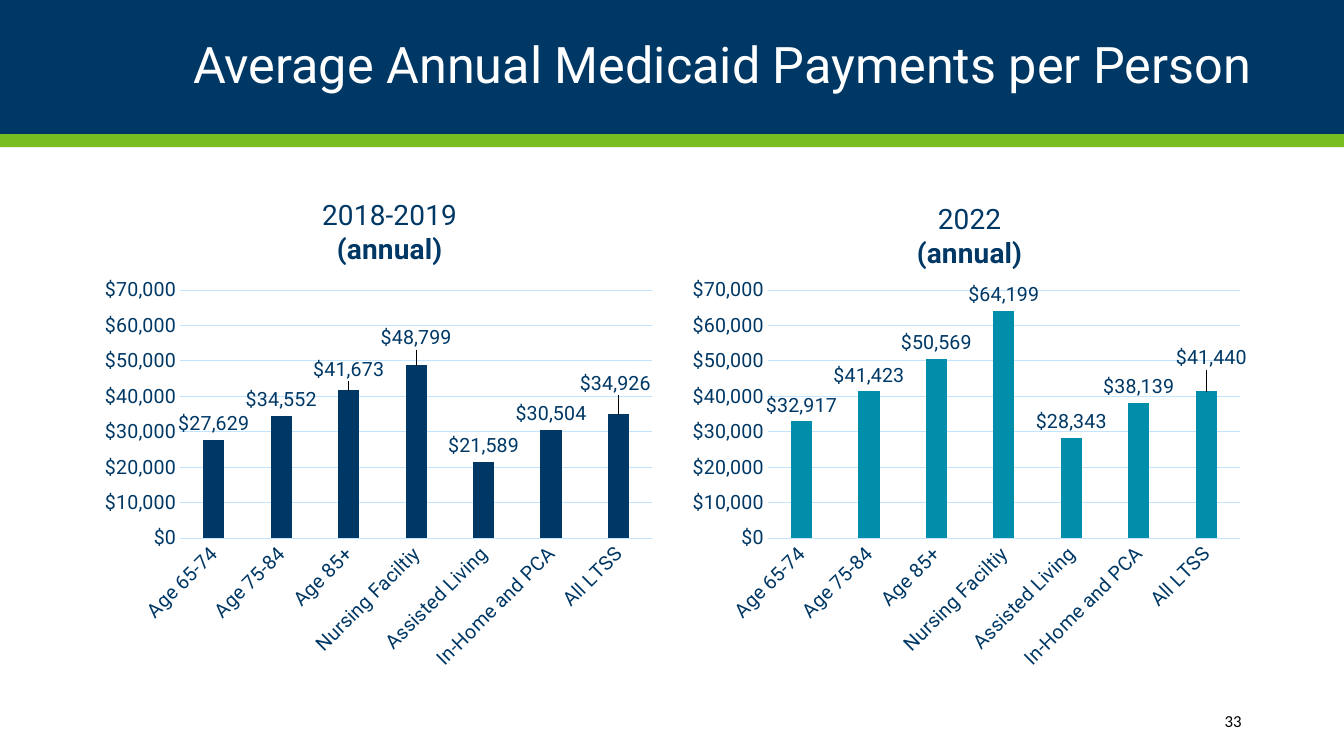
from dataclasses import dataclass

from lxml import etree
from pptx import Presentation
from pptx.chart.data import CategoryChartData
from pptx.dml.color import RGBColor
from pptx.enum.chart import XL_CHART_TYPE, XL_LABEL_POSITION, XL_TICK_MARK
from pptx.enum.shapes import MSO_SHAPE
from pptx.enum.text import MSO_ANCHOR, MSO_AUTO_SIZE, PP_ALIGN
from pptx.oxml.ns import qn
from pptx.util import Cm, Pt

COLUMNS = XL_CHART_TYPE.COLUMN_CLUSTERED
OUTSIDE_END = XL_LABEL_POSITION.OUTSIDE_END
NO_TICK = XL_TICK_MARK.NONE
RECTANGLE = MSO_SHAPE.RECTANGLE
MIDDLE = MSO_ANCHOR.MIDDLE
NO_AUTOFIT = MSO_AUTO_SIZE.NONE
RIGHT = PP_ALIGN.RIGHT


@dataclass(frozen=True)
class Theme:
    navy: RGBColor = RGBColor(0x00, 0x38, 0x65)
    green: RGBColor = RGBColor(0x78, 0xBE, 0x21)
    teal: RGBColor = RGBColor(0x00, 0x8E, 0xAA)
    grid: RGBColor = RGBColor(0xC2, 0xE4, 0xFF)
    white: RGBColor = RGBColor(0xFF, 0xFF, 0xFF)
    black: RGBColor = RGBColor(0x00, 0x00, 0x00)
    font: str = "Roboto"
    number_font: str = "Calibri"
    title_size: Pt = Pt(36)
    chart_title_size: Pt = Pt(20)
    label_size: Pt = Pt(14)
    number_size: Pt = Pt(12)
    hairline: Pt = Pt(0.75)


THEME = Theme()
SLIDE_WIDTH, SLIDE_HEIGHT = Cm(33.87), Cm(19.05)
BANNER_HEIGHT = Cm(3.38)
MARGIN = Cm(2.34)
CHART_TOP, CHART_WIDTH, CHART_HEIGHT = Cm(4.42), Cm(14.4), Cm(12.73)
DOLLARS = '"$"#,##0'
GROUPS = ["Age 65-74", "Age 75-84", "Age 85+", "Nursing Faciltiy",
          "Assisted Living", "In-Home and PCA", "All LTSS"]


def style_font(font, size, color, name=THEME.font):
    font.size = size
    font.name = name
    font.color.rgb = color


def add_band(slide, top, height, color):
    band = slide.shapes.add_shape(RECTANGLE, 0, top, SLIDE_WIDTH, height)
    band.shadow.inherit = False
    band.fill.solid()
    band.fill.fore_color.rgb = color
    band.line.fill.background()
    return band


def set_title(slide, text):
    title = slide.shapes.title
    title.left, title.top = MARGIN, 0
    title.width, title.height = Cm(29.21), BANNER_HEIGHT
    frame = title.text_frame
    frame.text = text
    frame.auto_size = NO_AUTOFIT
    frame.vertical_anchor = MIDDLE
    frame.margin_left = frame.margin_right = 0
    heading = frame.paragraphs[0]
    heading.alignment = RIGHT
    heading.line_spacing = 0.9
    style_font(heading.font, THEME.title_size, THEME.white)


def place_in_chart(parent, index, x, y, size=None, edge=True):
    """Give a chart part a manual layout, from lengths within the chart."""
    for old in parent.findall(qn("c:layout")):
        parent.remove(old)
    layout = etree.Element(qn("c:layout"))
    manual = etree.SubElement(layout, qn("c:manualLayout"))
    settings = []
    if size:
        settings.append(("layoutTarget", "inner"))
    if edge:
        settings += [("xMode", "edge"), ("yMode", "edge")]
    settings += [("x", x / CHART_WIDTH), ("y", y / CHART_HEIGHT)]
    if size:
        settings += [("w", size[0] / CHART_WIDTH), ("h", size[1] / CHART_HEIGHT)]
    for tag, value in settings:
        etree.SubElement(manual, qn(f"c:{tag}")).set("val", str(value))
    parent.insert(index, layout)


def set_chart_title(chart, period, x, y):
    frame = chart.chart_title.text_frame
    frame.text = period
    annual = frame.add_paragraph()
    annual.text = "(annual)"
    for paragraph in frame.paragraphs:
        style_font(paragraph.font, THEME.chart_title_size, THEME.navy)
        paragraph.font.bold = paragraph.text == annual.text
    place_in_chart(chart.element.xpath("c:chart/c:title")[0], 1, x, y)


def style_axes(chart):
    groups, payments = chart.category_axis, chart.value_axis
    for axis in (groups, payments):
        axis.major_tick_mark = axis.minor_tick_mark = NO_TICK
        style_font(axis.tick_labels.font, THEME.label_size, THEME.navy)
    payments.minimum_scale, payments.maximum_scale = 0, 70000
    payments.major_unit = 10000
    payments.tick_labels.number_format = DOLLARS
    payments.tick_labels.number_format_is_linked = False
    payments.format.line.fill.background()
    payments.has_major_gridlines = True
    for line in (groups.format.line, payments.major_gridlines.format.line):
        line.color.rgb = THEME.grid
        line.width = THEME.hairline
    slant = chart.element.xpath(".//c:catAx/c:txPr/a:bodyPr")[0]
    slant.set("rot", "-2700000")
    slant.set("vert", "horz")


def label_bars(plot, label_shifts):
    plot.has_data_labels = True
    labels = plot.data_labels
    labels.show_value = True
    labels.position = OUTSIDE_END
    labels.number_format = DOLLARS
    labels.number_format_is_linked = False
    style_font(labels.font, THEME.label_size, THEME.navy)
    bars = plot.series[0]
    for index, (x, y) in label_shifts.items():
        label = bars.points[index].data_label
        label.position = OUTSIDE_END
        style_font(label.font, THEME.label_size, THEME.navy)
        place = bars.data_labels
        place.show_value = True
        place.position = OUTSIDE_END
        place.number_format = DOLLARS
        place.number_format_is_linked = False
        style_font(place.font, THEME.label_size, THEME.navy)
    for element in plot.series[0].points and bars.format and label_elements(plot):
        index = int(element.find(qn("c:idx")).get("val"))
        place_in_chart(element, 1, *label_shifts[index], edge=False)


def label_elements(plot):
    return plot.series[0].data_labels._element.findall(qn("c:dLbl"))


def add_payment_chart(slide, left, period, payments, color, title_at, label_shifts):
    data = CategoryChartData(number_format=DOLLARS)
    data.categories = GROUPS
    data.add_series("Series 1", payments)
    chart = slide.shapes.add_chart(
        COLUMNS, left, CHART_TOP, CHART_WIDTH, CHART_HEIGHT, data).chart
    style_font(chart.font, THEME.label_size, THEME.navy)
    chart.has_legend = False
    set_chart_title(chart, period, *title_at)
    style_axes(chart)
    plot = chart.plots[0]
    plot.vary_by_categories = False
    plot.gap_width, plot.overlap = 219, -27
    fill = plot.series[0].format.fill
    fill.solid()
    fill.fore_color.rgb = color
    label_bars(plot, label_shifts)
    place_in_chart(chart.element.xpath("c:chart/c:plotArea")[0], 0,
                   Cm(2.2), Cm(2.89), size=(Cm(11.9), Cm(6.25)))


def add_slide_number(slide, number):
    frame = slide.shapes.add_textbox(Cm(27.48), Cm(17.65), Cm(4.06), Cm(1.02)).text_frame
    frame.word_wrap = True
    frame.vertical_anchor = MIDDLE
    paragraph = frame.paragraphs[0]
    paragraph.text = number
    paragraph.alignment = RIGHT
    style_font(paragraph.font, THEME.number_size, THEME.black, THEME.number_font)


def main():
    deck = Presentation()
    deck.slide_width, deck.slide_height = SLIDE_WIDTH, SLIDE_HEIGHT
    slide = deck.slides.add_slide(deck.slide_layouts.get_by_name("Title Only"))
    banner = add_band(slide, 0, BANNER_HEIGHT, THEME.navy)
    add_band(slide, BANNER_HEIGHT, Cm(0.33), THEME.green)
    slide.shapes.title.element.addprevious(banner.element)
    set_title(slide, "Average Annual Medicaid Payments per Person")
    add_payment_chart(
        slide, MARGIN, "2018-2019",
        [27629, 34552, 41673, 48799, 21589, 30504, 34926], THEME.navy,
        (Cm(5.7), Cm(0.48)),
        {2: (0, Cm(-0.13)), 3: (0, Cm(-0.28)), 6: (Cm(-0.08), Cm(-0.38))})
    add_payment_chart(
        slide, Cm(17.15), "2022",
        [32917, 41423, 50569, 64199, 28343, 38139, 41440], THEME.teal,
        (Cm(5.88), Cm(0.58)), {6: (Cm(0.13), Cm(-0.43))})
    add_slide_number(slide, "33")
    deck.save("out.pptx")


if __name__ == "__main__":
    main()
